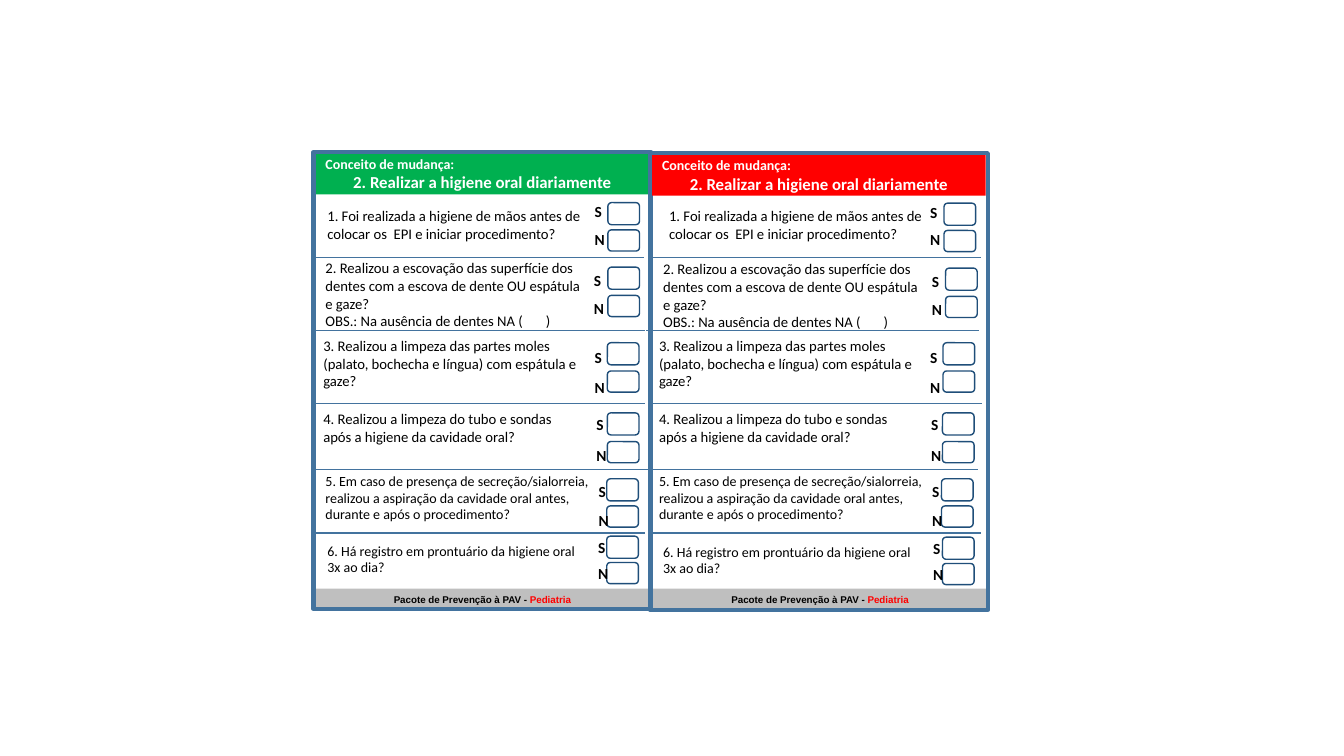
"""Build a slide with two oral hygiene checklist cards, one green and one red."""
import pptx
import pptx.dml.color
import pptx.enum.shapes
import pptx.enum.text
import pptx.util
import lxml.etree

HEADING = ["Conceito de mudança:", "2. Realizar a higiene oral diariamente"]
FOOTER = ["Pacote de Prevenção à PAV - ", "Pediatria"]

QUESTIONS = [
    dict(lines=["1. Foi realizada a higiene de mãos antes de colocar os  EPI e iniciar procedimento?"],
         size=10.5, area=(142.6, 196.6, 35.3), boxes=(144.7, 164.2), letters=(145.4, 165.6)),
    dict(lines=["2. Realizou a escovação das superfície dos dentes com a escova de dente OU espátula e gaze?",
                "OBS.: Na ausência de dentes NA (       )"],
         size=10.5, area=(185.8, 196.6, 49), boxes=(190.8, 211), letters=(194.4, 215.3)),
    dict(lines=["3. Realizou a limpeza das partes moles (palato, bochecha e língua) com espátula e gaze?"],
         size=10.5, area=(241.9, 196.6, 35.3), boxes=(244.8, 265), letters=(249.8, 271.4)),
    dict(lines=["4. Realizou a limpeza do tubo e sondas após a higiene da cavidade oral?"],
         size=10.5, area=(288, 196.6, 35.3), boxes=(294.9, 315.4), letters=(297.4, 320.4)),
    dict(lines=["5. Em caso de presença de secreção/sialorreia, realizou a aspiração da cavidade oral antes, "
                "durante e após o procedimento?"],
         size=10, area=(337.7, 204.5, 35.3), boxes=(342, 361.4), letters=(344.9, 367)),
    dict(lines=["6. Há registro em prontuário da higiene oral 3x ao dia?"],
         size=10, area=(381.6, 196.6, 35.3), boxes=(383, 401.8), letters=(385.2, 404.6)),
]
ANSWERS = [("S", 15.8, 11.5), ("N", 15.1, 10.1)]
DIVIDER_TOPS = [183.8, 236.2, 288.2, 335.5, 380.7]

CARDS = [
    dict(color="green", frame=(223.9, 108.7), heading=(225.4, 109.4), footer=225.4,
         questions=(226.8, 225.4, 223.9, 223.9, 225.4, 226.8),
         boxes=(434.2, 434.2, 433.8, 433.8, 433.4, 433.4),
         letters=(417.6, 417.2, 417.6, 419, 420.5, 420.1),
         drops=(0, 0, 0, 0, 0, 0),
         dividers=(222.5, 223.2, 223.2, 223.2, 223.2)),
    dict(color="red", frame=(464.4, 109.4), heading=(465.8, 110.2), footer=466.6,
         questions=(470.9, 466.6, 463.7, 463.7, 463.7, 466.6),
         boxes=(674.3, 675.4, 673.6, 673.2, 672.5, 673.2),
         letters=(657.4, 658.5, 657.4, 658.1, 658.8, 659.5),
         drops=(0.4, 0.7, 0, 0, 0, 0.7),
         dividers=(463, 461.5, 463.7, 460.8, 463)),
]

THEME = dict(
    green="00B050", red="FF0000", grey="BFBFBF", white="FFFFFF", black="000000",
    frame="43739E", box="1F4E79", body="Calibri", small="Arial",
    heading_sizes=(10, 12), answer_size=11, footer_size=7, frame_width=3, thin_width=1)

Pt = pptx.util.Pt
SHAPES = pptx.enum.shapes.MSO_SHAPE
ANCHOR = pptx.enum.text.MSO_ANCHOR
ALIGN = pptx.enum.text.PP_ALIGN


def rgb(name):
    return pptx.dml.color.RGBColor.from_string(THEME[name])


def add_outline(line, color, width):
    line.color.rgb = rgb(color)
    line.width = Pt(width)


def add_panel(shapes, kind, area, fill=None, outline=None, width=0):
    panel = shapes.add_shape(kind, *map(Pt, area))
    panel.shadow.inherit = False
    if fill:
        panel.fill.solid()
        panel.fill.fore_color.rgb = rgb(fill)
    else:
        panel.fill.background()
    if outline:
        add_outline(panel.line, outline, width)
    else:
        panel.line.fill.background()
    return panel


def write(shape, lines, sizes, aligns, color="black", bold=False):
    frame = shape.text_frame
    frame.word_wrap = True
    frame.vertical_anchor = ANCHOR.MIDDLE
    frame.text = "\n".join(lines)
    for paragraph, size, align in zip(frame.paragraphs, sizes, aligns):
        paragraph.alignment = align
        font = paragraph.font
        font.name, font.size, font.bold = THEME["body"], Pt(size), bold
        font.color.rgb = rgb(color)


def add_footer(shapes, left):
    footer = add_panel(shapes, SHAPES.RECTANGLE, (left, 420.5, 238.3, 15.8), "grey")
    footer.text_frame.word_wrap = True
    footer.text_frame.vertical_anchor = ANCHOR.TOP
    paragraph = footer.text_frame.paragraphs[0]
    paragraph.alignment = ALIGN.CENTER
    font = paragraph.font
    font.name, font.size, font.bold = THEME["small"], Pt(THEME["footer_size"]), True
    for words, color in zip(FOOTER, ("black", "red")):
        run = paragraph.add_run()
        run.text = words
        run.font.color.rgb = rgb(color)


def add_question(shapes, question, left, box_left, letter_left, drop):
    row = shapes.add_group_shape().shapes
    top, width, height = question["area"]
    text = row.add_textbox(Pt(left), Pt(top + drop), Pt(width), Pt(height))
    count = len(question["lines"])
    write(text, question["lines"], [question["size"]] * count, [ALIGN.LEFT] * count)
    for (_, box_height, _), box_top in zip(ANSWERS, question["boxes"]):
        add_panel(row, SHAPES.ROUNDED_RECTANGLE, (box_left, box_top + drop, 22.6, box_height),
                  outline="box", width=THEME["thin_width"])
    for (letter, _, letter_height), letter_top in zip(ANSWERS, question["letters"]):
        label = row.add_textbox(Pt(letter_left), Pt(letter_top + drop), Pt(16.6), Pt(letter_height))
        write(label, [letter], [THEME["answer_size"]], [ALIGN.CENTER], bold=True)


def add_divider(shapes, left, top):
    divider = shapes.add_connector(pptx.enum.shapes.MSO_CONNECTOR.STRAIGHT,
                                   Pt(left), Pt(top), Pt(left + 237.6), Pt(top))
    add_outline(divider.line, "frame", THEME["thin_width"])
    lxml.etree.SubElement(divider._element.spPr, pptx.oxml.ns.qn("a:effectLst"))


def add_card(shapes, card):
    add_footer(shapes, card["footer"])
    heading = add_panel(shapes, SHAPES.RECTANGLE, (*card["heading"], 238.3, 29.5), card["color"])
    write(heading, HEADING, THEME["heading_sizes"], (ALIGN.LEFT, ALIGN.CENTER), "white", True)
    add_panel(shapes, SHAPES.RECTANGLE, (*card["frame"], 241.2, 326.2),
              outline="frame", width=THEME["frame_width"])
    for row in zip(QUESTIONS, card["questions"], card["boxes"], card["letters"], card["drops"]):
        add_question(shapes, *row)
    for left, top in zip(card["dividers"], DIVIDER_TOPS):
        add_divider(shapes, left, top)


def main():
    deck = pptx.Presentation()
    deck.slide_width, deck.slide_height = Pt(960), Pt(540)
    slide = deck.slides.add_slide(deck.slide_layouts[6])
    for card in CARDS:
        add_card(slide.shapes, card)
    deck.save("out.pptx")


if __name__ == "__main__":
    main()
